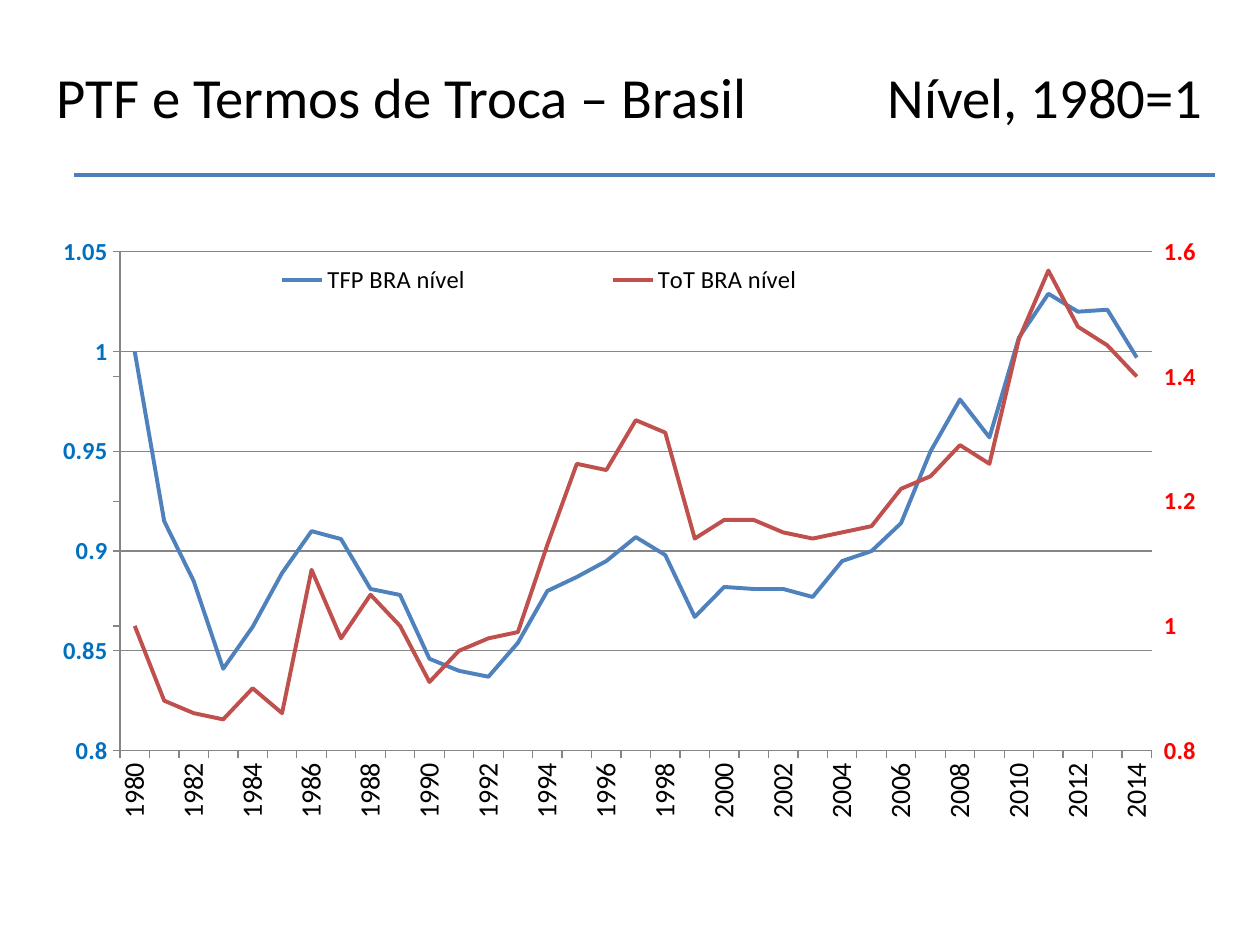
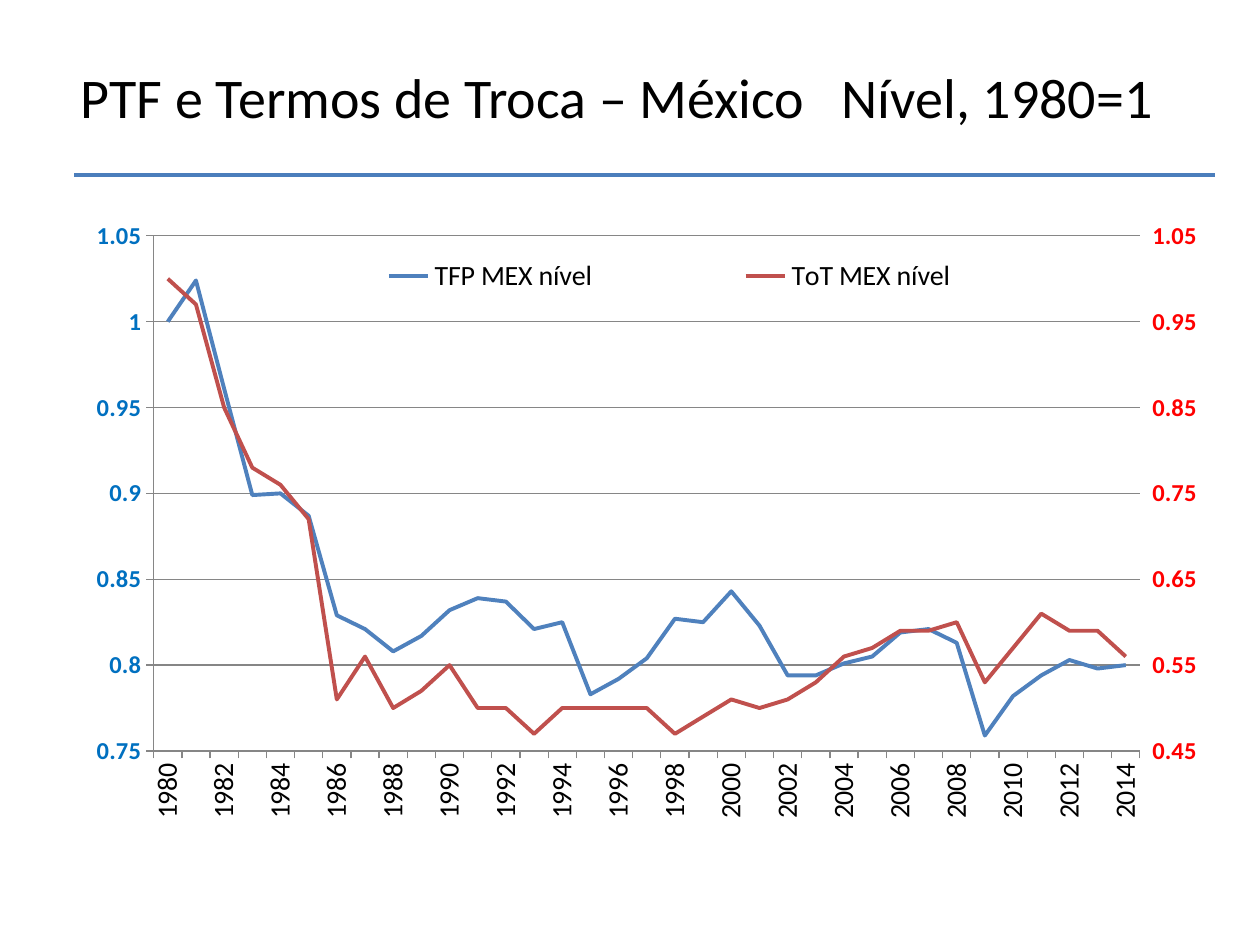
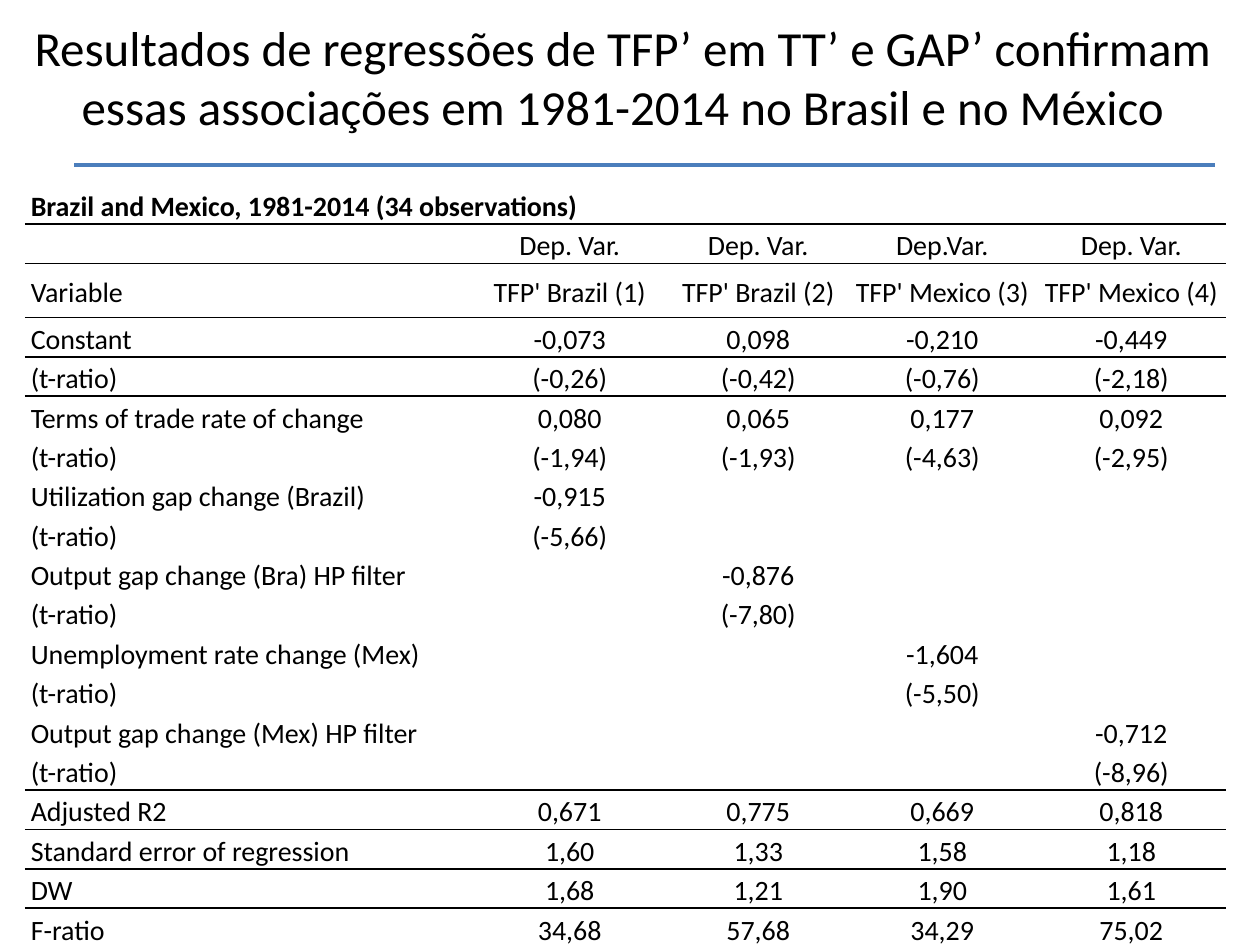
import copy
import dataclasses

import lxml.etree
import pptx
import pptx.chart.axis
import pptx.chart.data
import pptx.dml.color
import pptx.enum.chart
import pptx.enum.shapes
import pptx.enum.text
import pptx.oxml.ns
import pptx.util

Cm = pptx.util.Cm
Pt = pptx.util.Pt
qn = pptx.oxml.ns.qn


@dataclasses.dataclass(frozen=True)
class Theme:
    font: str = "Calibri"
    ink: str = "000000"
    band: str = "4B7EBC"
    productivity: str = "4F81BD"
    trade: str = "C0504D"
    left_axis: str = "0070C0"
    right_axis: str = "FF0000"
    grid: str = "868686"
    title_size: float = 32
    long_title_size: float = 28
    table_size: float = 16
    year_size: float = 16
    chart_size: float = 14
    thick: float = 2.25
    thin: float = 0.75
    rule: float = 1


THEME = Theme()
PLAIN_TABLE_STYLE = "{2D5ABB26-0587-4C30-8999-92F81FD0307C}"
YEARS = [str(year) for year in range(1980, 2015)]

BRAZIL_TFP = [
    1, 0.915, 0.885, 0.841, 0.862, 0.889, 0.91, 0.906, 0.881, 0.878, 0.846, 0.84,
    0.837, 0.854, 0.88, 0.887, 0.895, 0.907, 0.898, 0.867, 0.882, 0.881, 0.881,
    0.877, 0.895, 0.9, 0.914, 0.95, 0.976, 0.957, 1.007, 1.029, 1.02, 1.021, 0.997,
]
BRAZIL_TOT = [
    1, 0.88, 0.86, 0.85, 0.9, 0.86, 1.09, 0.98, 1.05, 1, 0.91, 0.96,
    0.98, 0.99, 1.13, 1.26, 1.25, 1.33, 1.31, 1.14, 1.17, 1.17, 1.15,
    1.14, 1.15, 1.16, 1.22, 1.24, 1.29, 1.26, 1.46, 1.57, 1.48, 1.45, 1.4,
]
MEXICO_TFP = [
    1, 1.024, 0.961, 0.899, 0.9, 0.887, 0.829, 0.821, 0.808, 0.817, 0.832, 0.839,
    0.837, 0.821, 0.825, 0.783, 0.792, 0.804, 0.827, 0.825, 0.843, 0.823, 0.794,
    0.794, 0.801, 0.805, 0.819, 0.821, 0.813, 0.759, 0.782, 0.794, 0.803, 0.798, 0.8,
]
MEXICO_TOT = [
    1, 0.97, 0.85, 0.78, 0.76, 0.72, 0.51, 0.56, 0.5, 0.52, 0.55, 0.5,
    0.5, 0.47, 0.5, 0.5, 0.5, 0.5, 0.47, 0.49, 0.51, 0.5, 0.51,
    0.53, 0.56, 0.57, 0.59, 0.59, 0.6, 0.53, 0.57, 0.61, 0.59, 0.59, 0.56,
]

REGRESSION_ROWS = [
    ["Brazil and Mexico, 1981-2014 (34 observations)", "", "", "", ""],
    ["", "Dep. Var.", "Dep. Var.", "Dep.Var.", "Dep. Var."],
    ["Variable", "TFP' Brazil (1)", "TFP' Brazil (2)", "TFP' Mexico (3)", "TFP' Mexico (4)"],
    ["Constant", "-0,073", "0,098", "-0,210", "-0,449"],
    ["(t-ratio)", "(-0,26)", "(-0,42)", "(-0,76)", "(-2,18)"],
    ["Terms of trade rate of change", "0,080", "0,065", "0,177", "0,092"],
    ["(t-ratio)", "(-1,94)", "(-1,93)", "(-4,63)", "(-2,95)"],
    ["Utilization gap change (Brazil)", "-0,915", "", "", ""],
    ["(t-ratio)", "(-5,66)", "", "", ""],
    ["Output gap change (Bra) HP filter", "", "-0,876", "", ""],
    ["(t-ratio)", "", "(-7,80)", "", ""],
    ["Unemployment rate change (Mex)", "", "", "-1,604", ""],
    ["(t-ratio)", "", "", "(-5,50)", ""],
    ["Output gap change (Mex) HP filter", "", "", "", "-0,712"],
    ["(t-ratio)", "", "", "", "(-8,96)"],
    ["Adjusted R2", "0,671", "0,775", "0,669", "0,818"],
    ["Standard error of regression", "1,60", "1,33", "1,58", "1,18"],
    ["DW", "1,68", "1,21", "1,90", "1,61"],
    ["F-ratio", "34,68", "57,68", "34,29", "75,02"],
]
RULED_ROWS = {0, 1, 2, 3, 14, 15, 16, 17, 18}
ROW_HEIGHTS = {0: 0.61, 2: 1.09, 14: 0.64}
COLUMN_WIDTHS = [8.99, 3.99, 3.61, 3.81, 3.81]


def rgb(value):
    return pptx.dml.color.RGBColor.from_string(value)


def style_font(font, size, color=THEME.ink, bold=False):
    font.name = THEME.font
    font.size = Pt(size)
    font.bold = bold
    font.color.rgb = rgb(color)


def style_line(line, color, width):
    line.color.rgb = rgb(color)
    line.width = Pt(width)


def add_page(deck, band_top):
    page = deck.slides.add_slide(deck.slide_layouts[5])
    y = Cm(band_top)
    band = page.shapes.add_connector(
        pptx.enum.shapes.MSO_CONNECTOR.STRAIGHT, Cm(1.5), y, Cm(24.5), y
    )
    style_line(band.line, THEME.band, THEME.thick)
    lxml.etree.SubElement(band.element.spPr, qn("a:effectLst"))
    return page


def add_title(page, text, bounds, size):
    title = page.shapes.title
    title.left, title.top, title.width, title.height = map(Cm, bounds)
    frame = title.text_frame
    frame.auto_size = pptx.enum.text.MSO_AUTO_SIZE.NONE
    frame.vertical_anchor = pptx.enum.text.MSO_ANCHOR.MIDDLE
    para = frame.paragraphs[0]
    para.alignment = pptx.enum.text.PP_ALIGN.CENTER
    span = para.add_run()
    span.text = text
    style_font(span.font, size)
    return frame


def add_split_title(page, subject, bounds, size, inset, note_offset):
    frame = add_title(page, f"{subject}\tNível, 1980=1", bounds, size)
    frame.margin_left = Cm(inset)
    para = frame.paragraphs[0]
    para.alignment = pptx.enum.text.PP_ALIGN.LEFT
    stops = lxml.etree.SubElement(para._p.get_or_add_pPr(), qn("a:tabLst"))
    lxml.etree.SubElement(stops, qn("a:tab"), pos=str(int(Cm(note_offset))), algn="l")


def set_layout(parent, position, bounds, inner=False):
    for old in parent.findall(qn("c:layout")):
        parent.remove(old)
    layout = lxml.etree.Element(qn("c:layout"))
    manual = lxml.etree.SubElement(layout, qn("c:manualLayout"))
    settings = [("layoutTarget", "inner")] if inner else []
    settings += [("xMode", "edge"), ("yMode", "edge")]
    settings += [(name, str(value)) for name, value in zip("xywh", bounds)]
    for name, value in settings:
        lxml.etree.SubElement(manual, qn(f"c:{name}"), val=value)
    parent.insert(position, layout)


def style_axis(axis, size, color=THEME.ink, bold=False):
    axis.major_tick_mark = pptx.enum.chart.XL_TICK_MARK.OUTSIDE
    axis.minor_tick_mark = pptx.enum.chart.XL_TICK_MARK.NONE
    style_line(axis.format.line, THEME.grid, THEME.thin)
    style_font(axis.tick_labels.font, size, color, bold)


def style_value_axis(axis, scale, color):
    axis.minimum_scale, axis.maximum_scale, axis.major_unit = scale
    axis.tick_labels.number_format = "General"
    axis.tick_labels.number_format_is_linked = False
    style_axis(axis, THEME.chart_size, color, True)


def style_year_axis(axis):
    style_axis(axis, THEME.year_size)
    element = axis._element
    element.find(f"{qn('c:txPr')}/{qn('a:bodyPr')}").set("rot", "-5400000")
    skip = lxml.etree.Element(qn("c:tickLblSkip"), val="2")
    element.find(qn("c:noMultiLvlLbl")).addprevious(skip)


def move_to_right_axis(plot_area, scale):
    left_lines = plot_area.find(qn("c:lineChart"))
    right_lines = copy.deepcopy(left_lines)
    left_lines.remove(left_lines.findall(qn("c:ser"))[1])
    right_lines.remove(right_lines.findall(qn("c:ser"))[0])
    left_lines.addnext(right_lines)

    years = copy.deepcopy(plot_area.find(qn("c:catAx")))
    values = copy.deepcopy(plot_area.find(qn("c:valAx")))
    plot_area.find(qn("c:valAx")).addnext(values)
    values.addnext(years)
    year_id, value_id = "50010", "50020"
    for axis, own, other in ((years, year_id, value_id), (values, value_id, year_id)):
        axis.find(qn("c:axId")).set("val", own)
        axis.find(qn("c:crossAx")).set("val", other)
    for reference, own in zip(right_lines.findall(qn("c:axId")), (year_id, value_id)):
        reference.set("val", own)

    maximum = pptx.enum.chart.XL_AXIS_CROSSES.MAXIMUM
    hidden_axis = pptx.chart.axis.CategoryAxis(years)
    hidden_axis.visible = False
    years.find(qn("c:delete")).set("val", "1")
    hidden_axis.crosses = maximum
    values.find(qn("c:axPos")).set("val", "r")
    right_axis = pptx.chart.axis.ValueAxis(values)
    right_axis.crosses = maximum
    right_axis.has_major_gridlines = False
    right_axis.tick_label_position = pptx.enum.chart.XL_TICK_LABEL_POSITION.HIGH
    style_value_axis(right_axis, scale, THEME.right_axis)


def add_legend(chart, bounds, size):
    chart.has_legend = True
    legend = chart.legend
    legend.position = pptx.enum.chart.XL_LEGEND_POSITION.RIGHT
    legend.include_in_layout = True
    style_font(legend.font, size)
    set_layout(legend._element, 1, bounds)


def add_level_chart(page, country, tfp, tot, left_scale, right_scale,
                    plot_bounds, legend_bounds, legend_size):
    data = pptx.chart.data.CategoryChartData(number_format="General")
    data.categories = YEARS
    data.add_series(f"TFP {country} nível", tfp)
    data.add_series(f"ToT {country} nível", tot)
    chart = page.shapes.add_chart(
        pptx.enum.chart.XL_CHART_TYPE.LINE, Cm(1.27), Cm(4.45), Cm(22.86), Cm(12.57), data
    ).chart
    chart.has_title = False
    style_font(chart.font, THEME.chart_size)
    plot = chart.plots[0]
    plot.vary_by_categories = False
    for series, color in zip(plot.series, (THEME.productivity, THEME.trade)):
        series.smooth = False
        style_line(series.format.line, color, THEME.thick)

    style_year_axis(chart.category_axis)
    left_axis = chart.value_axis
    left_axis.has_major_gridlines = True
    style_line(left_axis.major_gridlines.format.line, THEME.grid, THEME.thin)
    style_value_axis(left_axis, left_scale, THEME.left_axis)

    plot_area = chart._chartSpace.find(f".//{qn('c:plotArea')}")
    move_to_right_axis(plot_area, right_scale)
    set_layout(plot_area, 0, plot_bounds, inner=True)
    add_legend(chart, legend_bounds, legend_size)


def make_rule(tag):
    rule = lxml.etree.Element(qn(tag), w=str(int(Pt(THEME.rule))))
    fill = lxml.etree.SubElement(rule, qn("a:solidFill"))
    lxml.etree.SubElement(fill, qn("a:srgbClr"), val=THEME.ink)
    return rule


def fill_cell(cell, text, row, column):
    cell.fill.background()
    cell.margin_left = cell.margin_right = Cm(0.12)
    cell.margin_top = cell.margin_bottom = 0
    cell.vertical_anchor = pptx.enum.text.MSO_ANCHOR.MIDDLE
    properties = cell._tc.get_or_add_tcPr()
    if row in RULED_ROWS:
        properties.insert(0, make_rule("a:lnB"))
    if row - 1 in RULED_ROWS:
        properties.insert(0, make_rule("a:lnT"))
    if text:
        para = cell.text_frame.paragraphs[0]
        para.line_spacing = 1.15
        align = pptx.enum.text.PP_ALIGN
        para.alignment = align.CENTER if column else align.LEFT
        span = para.add_run()
        span.text = text
        style_font(span.font, THEME.table_size, bold=row == 0)


def add_regression_table(page):
    table = page.shapes.add_table(
        len(REGRESSION_ROWS), len(COLUMN_WIDTHS), Cm(0.5), Cm(3.72), Cm(24.21), Cm(15.11)
    ).table
    table.first_row = False
    table.horz_banding = False
    table._tbl.find(f".//{qn('a:tableStyleId')}").text = PLAIN_TABLE_STYLE
    for column, width in zip(table.columns, COLUMN_WIDTHS):
        column.width = Cm(width)
    for row, texts in enumerate(REGRESSION_ROWS):
        table.rows[row].height = Cm(ROW_HEIGHTS.get(row, 0.74))
        for column, text in enumerate(texts):
            fill_cell(table.cell(row, column), text, row, column)
    table.cell(0, 0).merge(table.cell(0, len(COLUMN_WIDTHS) - 1))


def main():
    deck = pptx.Presentation()
    deck.slide_width, deck.slide_height = Cm(25.4), Cm(19.05)

    brazil = add_page(deck, 3.53)
    add_split_title(brazil, "PTF e Termos de Troca – Brasil",
                    (0.51, 0.76, 24.41, 2.36), 32.4, 0.63, 16.76)
    add_level_chart(brazil, "BRA", BRAZIL_TFP, BRAZIL_TOT,
                    (0.8, 1.05, 0.05), (0.8, 1.6, 0.2),
                    (0.05, 0.05, 0.91, 0.8), (0.07, 0.06, 0.7, 0.07), 14)

    mexico = add_page(deck, 3.53)
    add_split_title(mexico, "PTF e Termos de Troca – México",
                    (0, 0.76, 24.89, 2.36), THEME.title_size, 1.63, 15.34)
    add_level_chart(mexico, "MEX", MEXICO_TFP, MEXICO_TOT,
                    (0.75, 1.05, 0.05), (0.45, 1.05, 0.1),
                    (0.08, 0.02, 0.87, 0.83), (0.16, 0.05, 0.75, 0.07), 16)

    regressions = add_page(deck, 3.33)
    add_title(regressions,
              "Resultados de regressões de TFP’ em TT’ e GAP’ confirmam "
              "essas associações em 1981-2014 no Brasil e no México",
              (0, 0.15, 25.1, 2.77), THEME.long_title_size)
    add_regression_table(regressions)

    deck.save("out.pptx")


if __name__ == "__main__":
    main()
